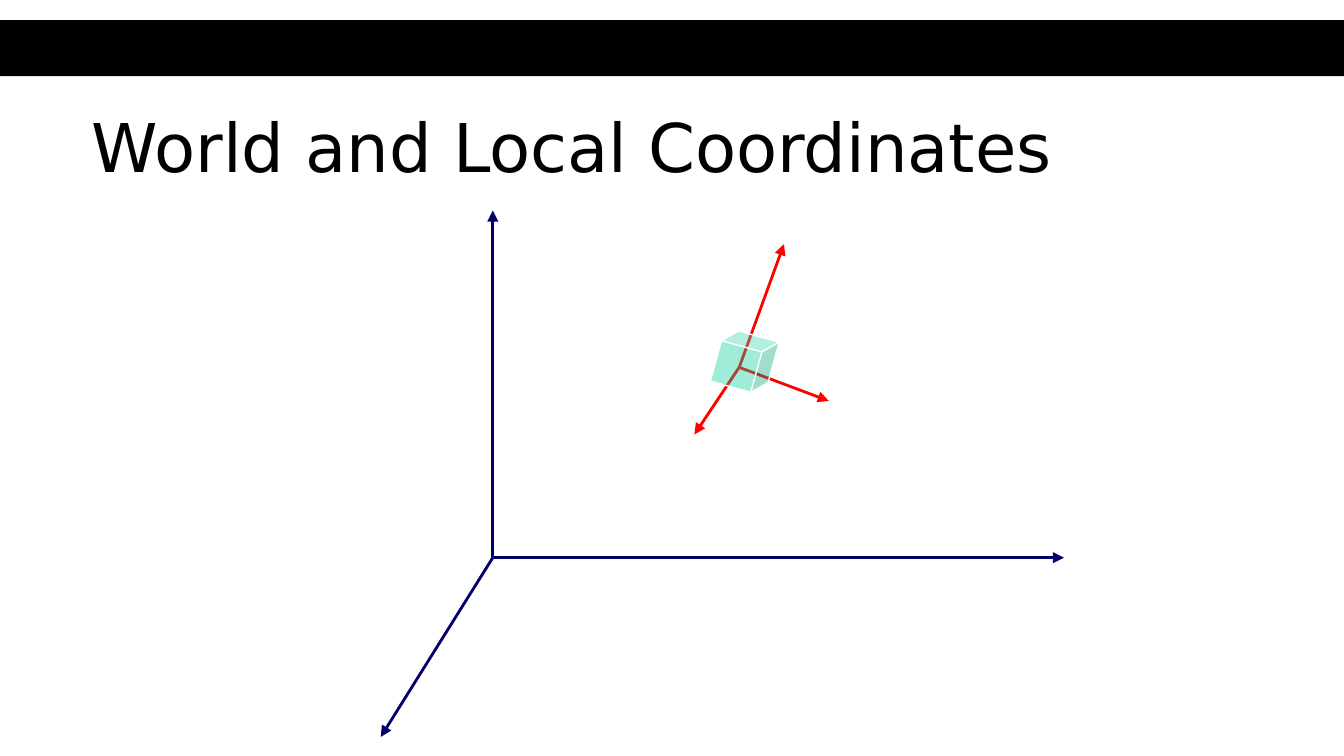
from typing import NamedTuple

from lxml.etree import SubElement
from pptx import Presentation
from pptx.dml.color import RGBColor
from pptx.enum.shapes import MSO_CONNECTOR as Line, MSO_SHAPE as Shape
from pptx.enum.text import MSO_ANCHOR as Anchor, MSO_AUTO_SIZE as Fit, PP_ALIGN as Align
from pptx.oxml.ns import qn
from pptx.util import Inches, Pt

WIDE = 10
HIGH = WIDE * 9 / 16
COLS = 120
CELL = WIDE / COLS
SHIFT = -0.2  # the rows start a little above the slide's top edge
FONT = "DejaVu Sans"
COLORS = {"ink": "000000", "world": "000066", "local": "FF0000",
          "cube": "00CC99", "edge": "FFFFFF"}


class Point(NamedTuple):
    col: float
    row: float


class Box(NamedTuple):
    col: float
    row: float
    cols: float
    rows: float


class Frame(NamedTuple):
    """A coordinate frame: its origin and the tips of its axes."""
    color: str
    start: Point
    tips: tuple[Point, ...]


BAND = Box(0, 2, COLS, 5)
TITLE = Box(7, 9, 106, 10.2)
CUBE = Box(64, 30, 5, 5)
FRAMES = (
    Frame("world", Point(44, 50), (Point(44, 19), Point(95, 50), Point(34, 66))),
    Frame("local", Point(66, 33), (Point(70, 22), Point(74, 36), Point(62, 39))),
)


def rgb(name: str) -> RGBColor:
    return RGBColor.from_string(COLORS[name])


def place(spot: Point | Box) -> list[int]:
    """Turn grid columns and rows into slide lengths."""
    col, row, *size = spot
    return [Inches(n * CELL) for n in (col, row + SHIFT, *size)]


def add_solid(slide, kind: Shape, box: Box, color: str):
    solid = slide.shapes.add_shape(kind, *place(box))
    solid.shadow.inherit = False
    solid.fill.solid()
    solid.fill.fore_color.rgb = rgb(color)
    solid.line.fill.background()
    return solid


def add_title(slide, text: str, box: Box) -> None:
    title = slide.shapes.title
    title.left, title.top, title.width, title.height = place(box)
    frame = title.text_frame
    frame.text = text
    frame.auto_size = Fit.NONE
    frame.vertical_anchor = Anchor.TOP
    para = frame.paragraphs[0]
    para.alignment = Align.LEFT
    para.font.name, para.font.size = FONT, Pt(36)
    para.font.color.rgb = rgb("ink")


def add_axes(slide, frame: Frame) -> None:
    for tip in frame.tips:
        axis = slide.shapes.add_connector(
            Line.STRAIGHT, *place(frame.start), *place(tip))
        axis.line.color.rgb = rgb(frame.color)
        axis.line.width = Pt(1.5)
        SubElement(axis.line._get_or_add_ln(), qn("a:tailEnd"), type="triangle")
        SubElement(axis._element.spPr, qn("a:effectLst"))


def add_cube(slide, box: Box) -> None:
    """Add the tilted, see-through cube."""
    cube = add_solid(slide, Shape.CUBE, box, "cube")
    cube.rotation = 15.5
    cube.line.color.rgb = rgb("edge")
    cube.line.width = Pt(0.75)
    tint = cube._element.spPr.find(qn("a:solidFill"))[0]
    SubElement(tint, qn("a:alpha"), val="37000")


def main() -> None:
    deck = Presentation()
    deck.slide_width, deck.slide_height = Inches(WIDE), Inches(HIGH)
    slide = deck.slides.add_slide(deck.slide_layouts[5])
    add_solid(slide, Shape.RECTANGLE, BAND, "ink")
    add_title(slide, "World and Local Coordinates", TITLE)
    for frame in FRAMES:
        add_axes(slide, frame)
    add_cube(slide, CUBE)
    deck.save("out.pptx")


if __name__ == "__main__":
    main()
